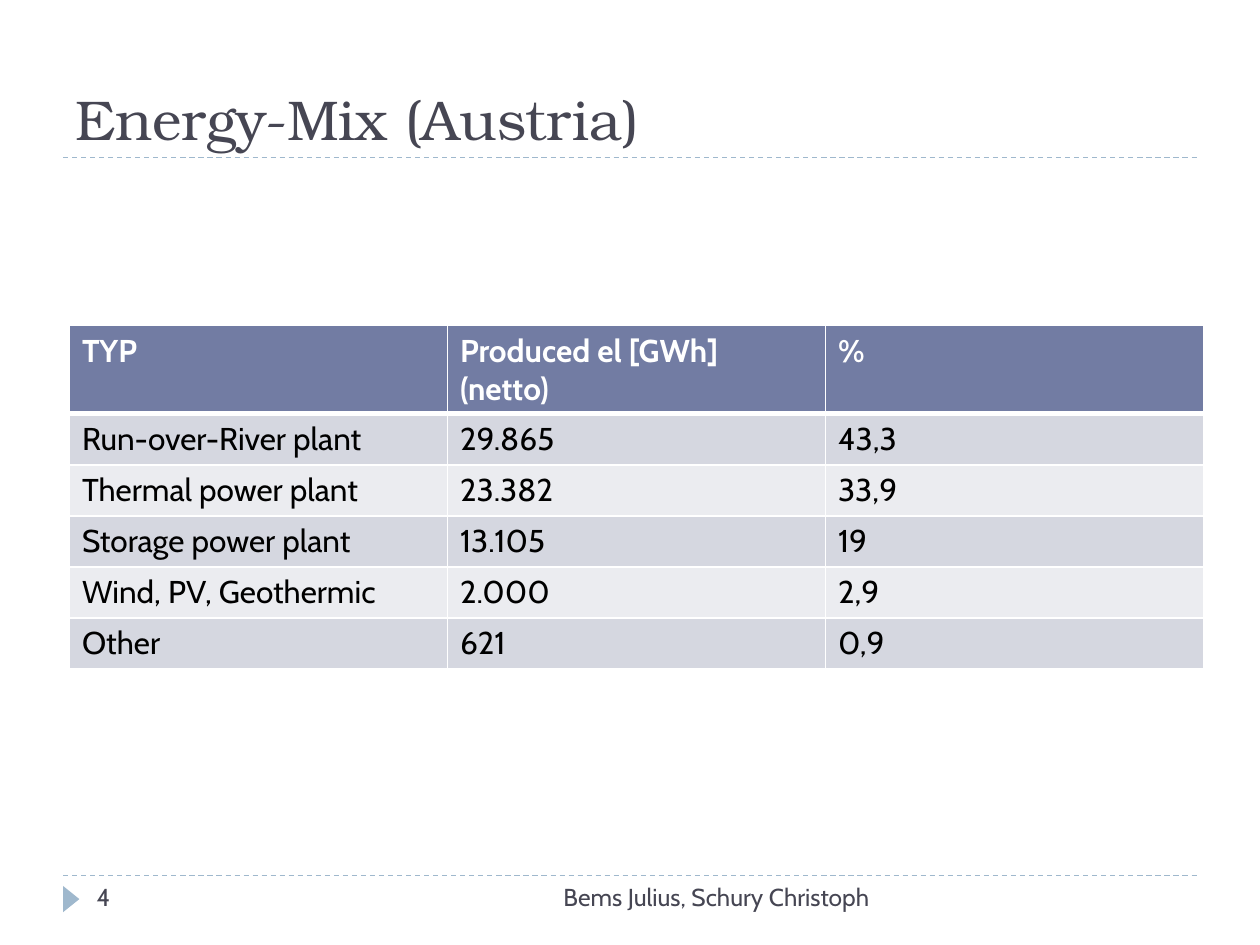
from lxml import etree
from pptx import Presentation
from pptx.dml.color import RGBColor
from pptx.enum.dml import MSO_LINE
from pptx.enum.shapes import MSO_CONNECTOR, MSO_SHAPE
from pptx.enum.text import MSO_ANCHOR, PP_ALIGN
from pptx.oxml.ns import qn
from pptx.util import Cm, Pt

STRAIGHT = MSO_CONNECTOR.STRAIGHT
TRIANGLE = MSO_SHAPE.ISOSCELES_TRIANGLE
DASH = MSO_LINE.DASH
TOP, BOTTOM = MSO_ANCHOR.TOP, MSO_ANCHOR.BOTTOM
LEFT, RIGHT = PP_ALIGN.LEFT, PP_ALIGN.RIGHT
COLORS = {
    "text": "464653",
    "accent": "9FB8CD",
    "header": "727CA3",
    "odd": "D5D7E0",
    "even": "EBECF0",
    "white": "FFFFFF",
    "black": "000000",
}


def write(frame, text, size=14, font="Cabin", color="text", bold=False, align=LEFT, anchor=TOP):
    frame.word_wrap = True
    frame.vertical_anchor = anchor
    para = frame.paragraphs[0]
    para.alignment = align
    span = para.add_run()
    span.text = text
    span.font.size = Pt(size)
    span.font.name = font
    span.font.bold = bold
    span.font.color.rgb = RGBColor.from_string(COLORS[color])


def add_border(cell, index, side, width):
    line = etree.Element(qn(f"a:{side}"), w=str(Pt(width)))
    fill = etree.SubElement(line, qn("a:solidFill"))
    etree.SubElement(fill, qn("a:srgbClr"), val=COLORS["white"])
    cell._tc.get_or_add_tcPr().insert(index, line)


deck = Presentation()
deck.slide_width, deck.slide_height = Cm(25.4), Cm(19.05)
page = deck.slides.add_slide(deck.slide_layouts[6])

for y in (17.65, 3.18):
    rule = page.shapes.add_connector(STRAIGHT, Cm(1.27), Cm(y), Cm(24.13), Cm(y))
    rule.line.color.rgb = RGBColor.from_string(COLORS["accent"])
    rule.line.width = Pt(0.75)
    rule.line.dash_style = DASH
    etree.SubElement(rule._element.spPr, qn("a:effectLst"))

marker = page.shapes.add_shape(TRIANGLE, Cm(1.17), Cm(17.96), Cm(0.53), Cm(0.33))
marker.rotation = 90
marker.shadow.inherit = False
marker.fill.solid()
marker.fill.fore_color.rgb = RGBColor.from_string(COLORS["accent"])
marker.line.fill.background()

texts = [
    ("Energy-Mix (Austria)", (1.27, 0.43, 22.86, 2.75),
     {"size": 32, "font": "TeX Gyre Bonum", "anchor": BOTTOM}),
    ("Bems Julius, Schury Christoph", (8.05, 17.65, 9.73, 1.02), {"align": RIGHT}),
    ("4", (1.7, 17.65, 5.51, 1.02), {}),
]
for text, place, style in texts:
    box = page.shapes.add_textbox(*map(Cm, place))
    write(box.text_frame, text, **style)

rows = [
    ("TYP", "Produced el [GWh] (netto)", "%"),
    ("Run-over-River plant", "29.865", "43,3"),
    ("Thermal power plant", "23.382", "33,9"),
    ("Storage power plant", "13.105", "19"),
    ("Wind, PV, Geothermic", "2.000", "2,9"),
    ("Other", "621", "0,9"),
]
table = page.shapes.add_table(
    len(rows), 3, Cm(1.4), Cm(6.56), Cm(22.86), Cm(1.03 * len(rows))
).table
for r, values in enumerate(rows):
    is_header = r == 0
    fill = "header" if is_header else "odd" if r % 2 else "even"
    widths = {"lnL": 1, "lnR": 1, "lnT": 3 if r == 1 else 1, "lnB": 3 if is_header else 1}
    for c, value in enumerate(values):
        cell = table.cell(r, c)
        write(cell.text_frame, value, size=18, bold=is_header,
              color="white" if is_header else "black")
        cell.fill.solid()
        cell.fill.fore_color.rgb = RGBColor.from_string(COLORS[fill])
        for index, (side, width) in enumerate(widths.items()):
            add_border(cell, index, side, width)

deck.save("out.pptx")
